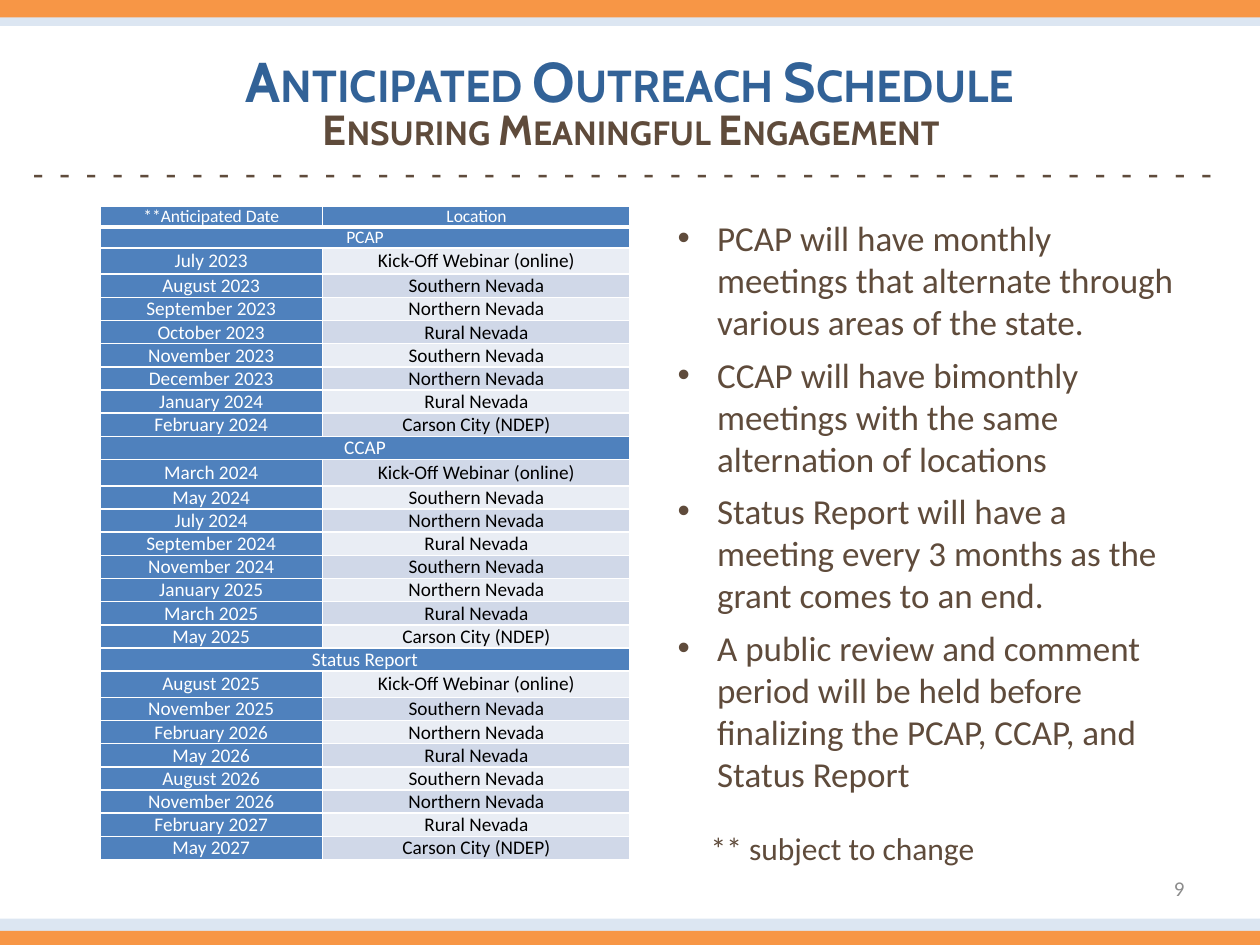
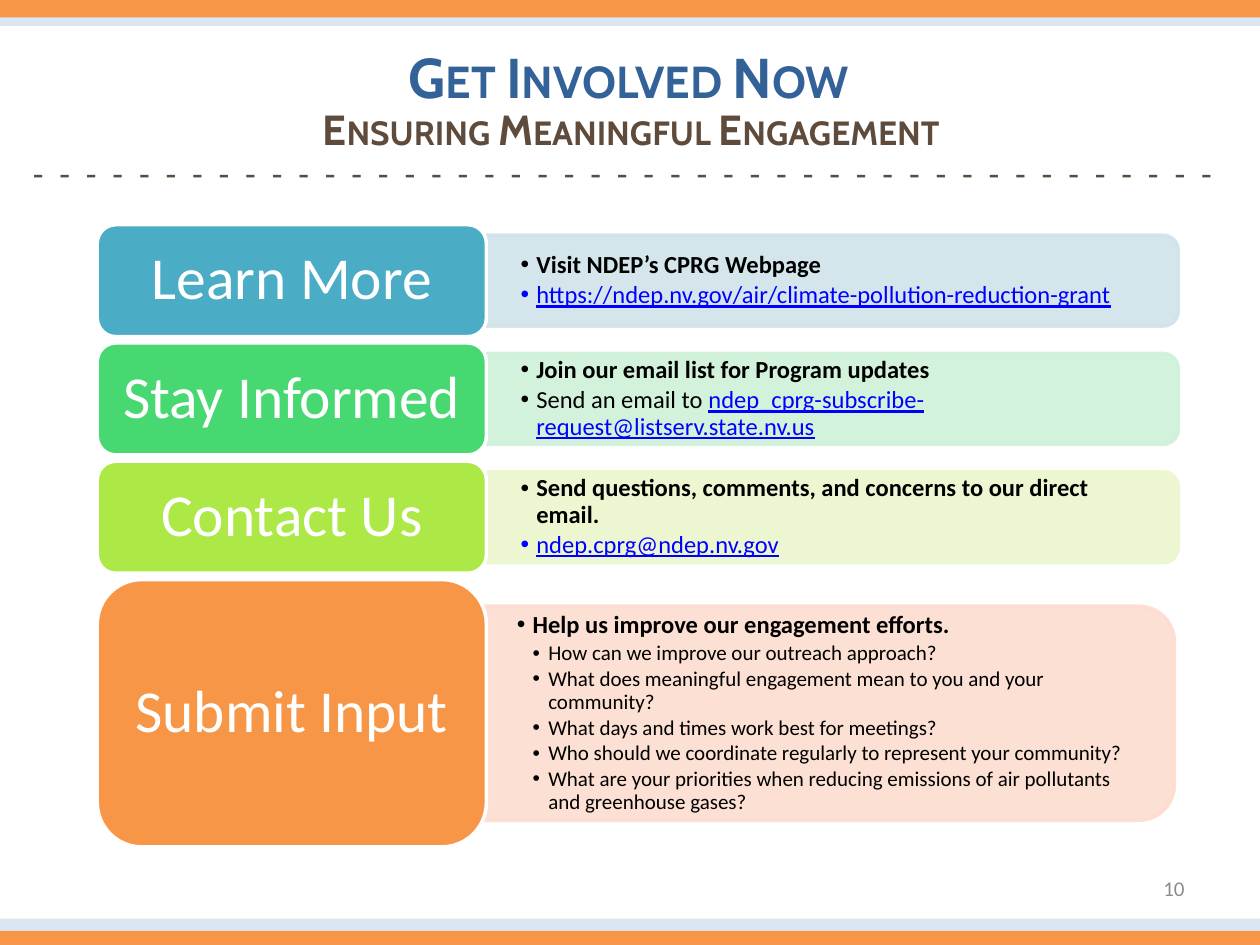
from dataclasses import dataclass, field
from typing import Any

from lxml.etree import SubElement
from pptx import Presentation
from pptx.dml.color import RGBColor
from pptx.enum.shapes import MSO_SHAPE
from pptx.enum.text import MSO_ANCHOR, PP_ALIGN
from pptx.oxml.ns import qn
from pptx.util import Pt

ORANGE = RGBColor(0xF7, 0x96, 0x46)
PALE_BLUE = RGBColor(0xDC, 0xE6, 0xF2)
TITLE_BLUE = RGBColor(0x32, 0x62, 0x97)
BROWN = RGBColor(0x5F, 0x4B, 0x3B)
GRAY = RGBColor(0x8C, 0x8C, 0x8C)
WHITE = RGBColor(0xFF, 0xFF, 0xFF)
BLACK = RGBColor(0, 0, 0)
LINK_BLUE = RGBColor(0, 0, 0xFF)
TABLE_BLUE = RGBColor(0x4F, 0x81, 0xBD)
ROW_TINTS = (RGBColor(0xE9, 0xED, 0xF4), RGBColor(0xD0, 0xD8, 0xE8))

SLIDE_W, SLIDE_H = 720, 540
NBSP = chr(160)
DASHES = (f"-{NBSP} " * 8 + f"-{NBSP}{NBSP}") * 5
INSET = (7.2, 3.6)

HEADING = {"name": "Cabin", "bold": True}
BODY = {"name": "Calibri", "size": Pt(20), "color": BROWN}
LABEL = {"name": "Calibri", "size": Pt(34), "color": WHITE}
LEAD = {"name": "Calibri", "size": Pt(14), "color": BLACK, "bold": True}
PLAIN = {**LEAD, "bold": False}
LINK = {**PLAIN, "color": LINK_BLUE, "underline": True}
QUESTION = {**PLAIN, "size": Pt(12)}


@dataclass
class Box:
    x: float
    y: float
    w: float
    h: float

    def emu(self) -> list[int]:
        return [Pt(v) for v in (self.x, self.y, self.w, self.h)]


@dataclass
class Para:
    """One paragraph: (text, font format) runs, with lengths in points."""
    runs: list[tuple[str, dict[str, Any]]]
    fmt: dict[str, Any] = field(default_factory=dict)
    indent: float = 0
    hang: float = 0


@dataclass
class Step:
    label: str
    color: RGBColor
    tint: RGBColor
    label_h: float
    panel_h: float
    text: Box
    paras: list[Para]


CENTERED = {"alignment": PP_ALIGN.CENTER}


def point(text: str, fmt: dict[str, Any], indent: float = 9) -> Para:
    return points([(text, fmt)], indent)


def points(runs: list[tuple[str, dict[str, Any]]], indent: float = 9) -> Para:
    """A compact bulleted paragraph, spaced in proportion to its type size."""
    after = Pt(0.15 * runs[0][1]["size"].pt)
    return Para(runs, {"line_spacing": 0.9, "space_after": after}, indent, 9)


BANDS = [
    (Box(0, 525, SLIDE_W, 8), PALE_BLUE),
    (Box(0, 532, SLIDE_W, 8), ORANGE),
    (Box(0, 7.2, SLIDE_W, 7.6), PALE_BLUE),
    (Box(0, 0, SLIDE_W, 10), ORANGE),
]

MEETING_PLACES = ["Southern Nevada", "Northern Nevada", "Rural Nevada"]
KICK_OFF, CLOSING = "Kick-Off Webinar (online)", "Carson City (NDEP)"
SCHEDULE = {
    "PCAP": ["July 2023", "August 2023", "September 2023", "October 2023",
             "November 2023", "December 2023", "January 2024", "February 2024"],
    "CCAP": ["March 2024", "May 2024", "July 2024", "September 2024",
             "November 2024", "January 2025", "March 2025", "May 2025"],
    "Status Report": ["August 2025", "November 2025", "February 2026", "May 2026",
                      "August 2026", "November 2026", "February 2027", "May 2027"],
}
OUTREACH_NOTES = [
    "PCAP will have monthly meetings that alternate through various areas of the state.",
    "CCAP will have bimonthly meetings with the same alternation of locations",
    "Status Report will have a meeting every 3 months as the grant comes to an end.",
    "A public review and comment period will be held before finalizing the PCAP, CCAP, "
    "and Status Report",
]
QUESTIONS = [
    "How can we improve our outreach approach?",
    "What does meaningful engagement mean to you and your community?",
    "What days and times work best for meetings?",
    "Who should we coordinate regularly to represent your community?",
    "What are your priorities when reducing emissions of air pollutants and greenhouse gases?",
]
SHORT_TEXT = Box(278, 0, 393, 46.8)
STEPS = [
    Step("Learn More", RGBColor(0x4B, 0xAC, 0xC6), RGBColor(0xD0, 0xE3, 0xEA), 64, 52, SHORT_TEXT, [
        point("Visit NDEP’s CPRG Webpage", LEAD),
        point("https://ndep.nv.gov/air/climate-pollution-reduction-grant", LINK)]),
    Step("Stay Informed", RGBColor(0x47, 0xD8, 0x72), RGBColor(0xCF, 0xF1, 0xD9), 64, 52, SHORT_TEXT, [
        point("Join our email list for Program updates", LEAD),
        points([("Send an email to ", PLAIN),
                ("ndep_cprg-subscribe-request@listserv.state.nv.us", LINK)])]),
    Step("Contact Us", RGBColor(0xAC, 0xE9, 0x46), RGBColor(0xEB, 0xF7, 0xCE), 64, 52, SHORT_TEXT, [
        point("Send questions, comments, and concerns to our direct email.", LEAD),
        point("ndep.cprg@ndep.nv.gov", LINK)]),
    Step("Submit Input", ORANGE, RGBColor(0xFC, 0xDD, 0xCF), 152.8, 122.4, Box(275.8, 0, 389.5, 110.2), [
        point("Help us improve our engagement efforts.", LEAD),
        *(point(q, QUESTION, 18) for q in QUESTIONS)]),
]


def apply(target: Any, fmt: dict[str, Any]) -> None:
    for name, value in fmt.items():
        setattr(target, name, value)


def write(tf: Any, paras: list[Para]) -> None:
    for i, para in enumerate(paras):
        p = tf.add_paragraph() if i else tf.paragraphs[0]
        apply(p, para.fmt)
        if para.hang:
            pPr = p._p.get_or_add_pPr()
            pPr.set("marL", str(Pt(para.indent)))
            pPr.set("indent", str(-Pt(para.hang)))
            SubElement(pPr, qn("a:buFont"), typeface="Arial")
            SubElement(pPr, qn("a:buChar"), char="•")
        for text, fmt in para.runs:
            r = p.add_run()
            r.text = text
            font = dict(fmt)
            r.font.color.rgb = font.pop("color")
            apply(r.font, font)
            if fmt["name"] == "Cabin":
                r.font._element.set("cap", "small")


def set_frame(tf: Any, inset: tuple[float, float], anchor: MSO_ANCHOR) -> None:
    dx, dy = map(Pt, inset)
    apply(tf, {"word_wrap": True, "vertical_anchor": anchor, "margin_left": dx,
               "margin_right": dx, "margin_top": dy, "margin_bottom": dy})


def add_text(slide: Any, box: Box, paras: list[Para], anchor: MSO_ANCHOR = MSO_ANCHOR.TOP,
             inset: tuple[float, float] = INSET) -> None:
    tf = slide.shapes.add_textbox(*box.emu()).text_frame
    set_frame(tf, inset, anchor)
    write(tf, paras)


def add_block(slide: Any, kind: MSO_SHAPE, box: Box, fill: RGBColor,
              line: RGBColor | None = None) -> Any:
    sp = slide.shapes.add_shape(kind, *box.emu())
    sp.shadow.inherit = False
    sp.fill.solid()
    sp.fill.fore_color.rgb = fill
    if line is None:
        sp.line.fill.background()
    else:
        sp.line.color.rgb = line
        sp.line.width = Pt(2)
    return sp


def add_base_slide(prs: Any, title: str, number: int, title_at: tuple[float, float]) -> Any:
    """Add a slide with the shared bands, title, subtitle, dashes and number."""
    slide = prs.slides.add_slide(prs.slide_layouts[6])
    add_text(slide, Box(0.7, 55.4, SLIDE_W, 33.8), [Para(
        [("Ensuring Meaningful Engagement", {**HEADING, "size": Pt(24), "color": BROWN})], CENTERED)])
    for box, color in BANDS:
        add_block(slide, MSO_SHAPE.RECTANGLE, box, color)
    add_text(slide, Box(*title_at, SLIDE_W, 46), [Para(
        [(title, {**HEADING, "size": Pt(32), "color": TITLE_BLUE})], CENTERED)])
    add_text(slide, Box(0.7, 82.8, SLIDE_W, 31.7),
             [Para([(DASHES, BODY)], {**CENTERED, "space_before": Pt(12)})])
    add_text(slide, Box(516, 493.2, 168, 28.8), [Para(
        [(str(number), {**BODY, "size": Pt(12), "color": GRAY})],
        {"alignment": PP_ALIGN.RIGHT})], MSO_ANCHOR.MIDDLE)
    return slide


def fill_cell(cell: Any, text: str, fill: RGBColor, color: RGBColor = WHITE,
              size: float = 11, bottom: float = 1) -> None:
    set_frame(cell, (4.3, 0), MSO_ANCHOR.MIDDLE)
    write(cell.text_frame, [Para(
        [(text, {"name": "Calibri", "size": Pt(size), "color": color})], CENTERED)])
    tcPr = cell._tc.get_or_add_tcPr()
    for side, width in {"L": 1, "R": 1, "T": 1, "B": bottom}.items():
        ln = SubElement(tcPr, qn(f"a:ln{side}"), w=str(Pt(width)))
        SubElement(SubElement(ln, qn("a:solidFill")), qn("a:srgbClr"), val=str(WHITE))
    cell.fill.solid()
    cell.fill.fore_color.rgb = fill


def add_schedule(slide: Any) -> None:
    rows: list[tuple[str, str]] = [("**Anticipated Date", "Location")]
    for section, dates in SCHEDULE.items():
        places = [KICK_OFF, *(MEETING_PLACES * 2), CLOSING]
        rows += [(section, ""), *zip(dates, places)]
    table = slide.shapes.add_table(len(rows), 2, *Box(57, 117.6, 303.1, 371.5).emu()).table
    for col, width in zip(table.columns, (127.4, 175.7)):
        col.width = Pt(width)
    for i, (date, place) in enumerate(rows):
        left, right = table.cell(i, 0), table.cell(i, 1)
        size = 10 if i < 2 else 11
        bottom = 1 if i else 3
        table.rows[i].height = Pt(15 if place == KICK_OFF else 12 if i < 2 else 13.2)
        fill_cell(left, date, TABLE_BLUE, size=size, bottom=bottom)
        if not place:
            left.merge(right)
        elif i == 0:
            fill_cell(right, place, TABLE_BLUE, size=size, bottom=bottom)
        else:
            fill_cell(right, place, ROW_TINTS[i % 2], BLACK)


def add_step(slide: Any, step: Step, top: float) -> None:
    """Draw a label with a tinted panel to its right, both centred on one line."""
    middle = top + step.label_h / 2
    length = 395.3
    center_x = step.text.x + length / 2
    panel = add_block(slide, MSO_SHAPE.ROUND_2_SAME_RECTANGLE,
                      Box(center_x - step.panel_h / 2, middle - length / 2, step.panel_h, length),
                      step.tint, step.tint)
    panel.rotation = 90
    for clr in panel._element.spPr.iter(qn("a:srgbClr")):
        SubElement(clr, qn("a:alpha"), val="90000")
    text = step.text
    add_text(slide, Box(text.x, middle - text.h / 2, text.w, text.h), step.paras,
             MSO_ANCHOR.MIDDLE, (19.5, 9.75))
    label = add_block(slide, MSO_SHAPE.ROUNDED_RECTANGLE, Box(55.6, top, 222.4, step.label_h),
                      step.color, WHITE)
    set_frame(label.text_frame, (10, 5), MSO_ANCHOR.MIDDLE)
    write(label.text_frame, [Para([(step.label, LABEL)], {**CENTERED, "line_spacing": 0.9})])


def build_schedule_slide(prs: Any) -> None:
    slide = add_base_slide(prs, "Anticipated Outreach Schedule", 9, (0, 23))
    add_schedule(slide)
    add_text(slide, Box(399, 470.2, 230.4, 28.8),
             [Para([("** subject to change", {**BODY, "size": Pt(18)})])])
    add_text(slide, Box(344.2, 120.2, 338.4, 370.8), [
        Para([(note, BODY)], {"space_before": Pt(6)}, 58.5, 22.5) for note in OUTREACH_NOTES])


def build_involvement_slide(prs: Any) -> None:
    slide = add_base_slide(prs, "Get Involved Now", 10, (-0.7, 21))
    top, gap = 128.4, 3.6
    for step in STEPS:
        add_step(slide, step, top)
        top += step.label_h + gap


def main() -> None:
    prs = Presentation()
    prs.slide_width, prs.slide_height = Pt(SLIDE_W), Pt(SLIDE_H)
    build_schedule_slide(prs)
    build_involvement_slide(prs)
    prs.save("out.pptx")


if __name__ == "__main__":
    main()
